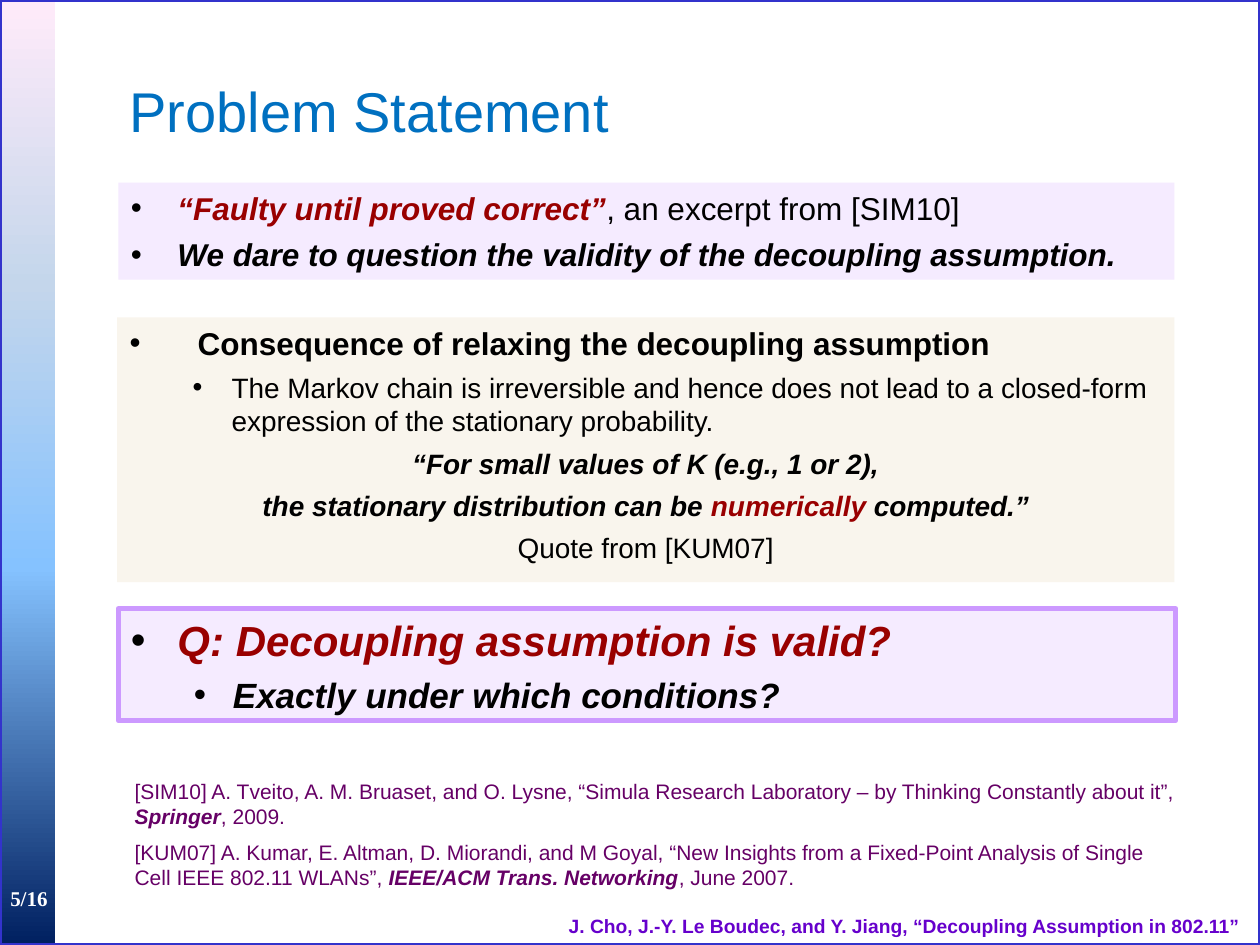
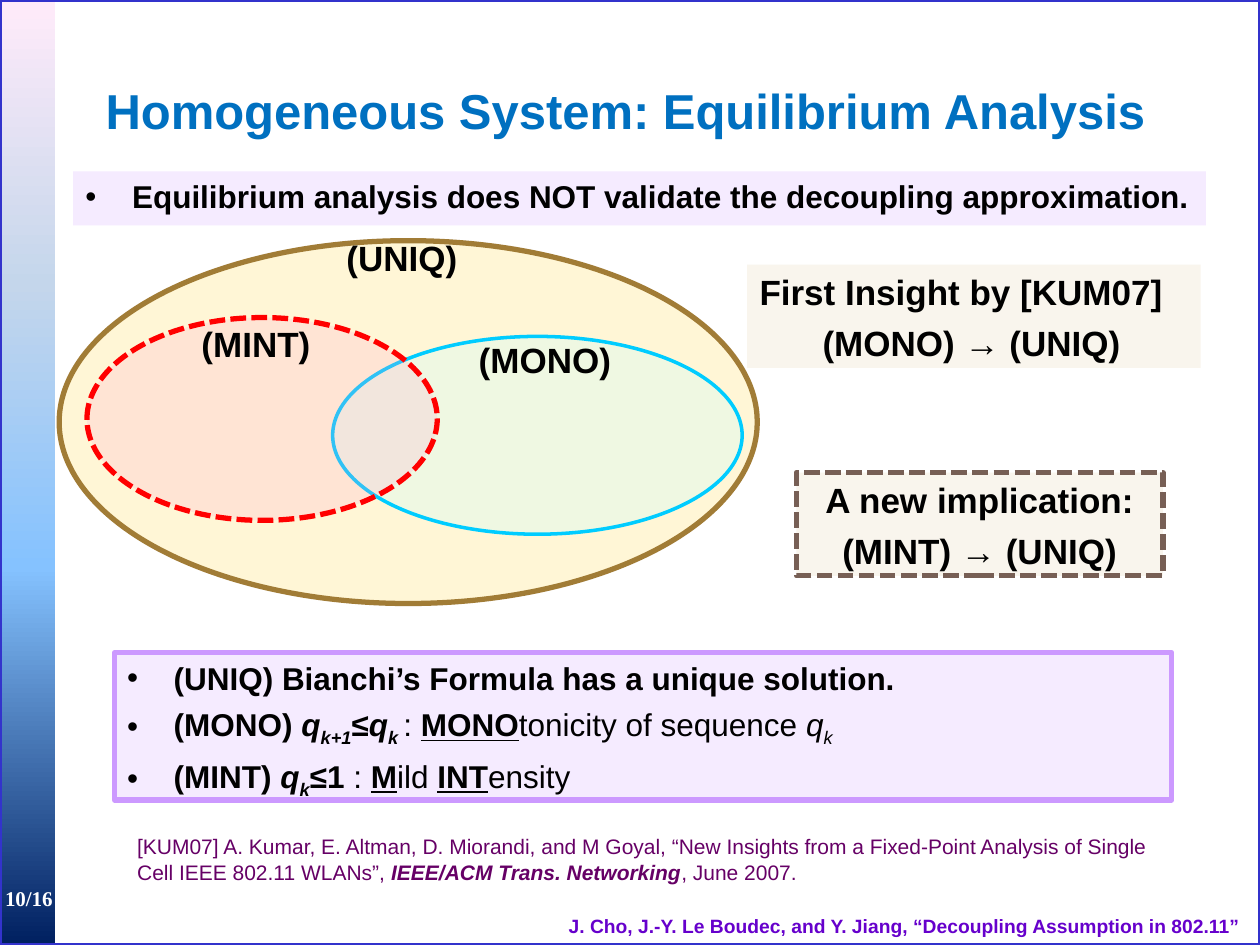
from dataclasses import dataclass
from typing import NamedTuple

from lxml.etree import SubElement
from pptx import Presentation
from pptx.dml.color import RGBColor
from pptx.enum.dml import MSO_LINE
from pptx.enum.shapes import MSO_SHAPE
from pptx.enum.text import MSO_ANCHOR, PP_ALIGN
from pptx.oxml.ns import qn
from pptx.util import Emu, Pt

EMU_PER_PX = 9144
SLIDE_WIDTH, SLIDE_HEIGHT = 1000, 750
COLORS = {
    "black": "000000", "white": "FFFFFF", "title": "0070C0", "accent": "990000",
    "reference": "660066", "footer": "6600CC", "frame": "3333CC",
    "lilac": "F5EBFF", "lilac_edge": "CC99FF", "cream": "F9F5ED", "brown": "775F55",
    "uniq": "FFCC00", "uniq_edge": "A17C36", "mono": "CCFFFF", "mono_edge": "00CCFF",
    "mint": "FF99CC", "mint_edge": "FF0000",
    "navy": "002060", "sky": "85C2FF", "mist": "C4D6EB", "blush": "FFEBFA",
}
BAND_STOPS = ((0, "navy"), (40, "sky"), (70, "mist"), (100, "blush"))
FORMATS = {"b": ("bold", True), "i": ("italic", True), "u": ("underline", True)}


class Bounds(NamedTuple):
    left: int
    top: int
    width: int
    height: int


class Outline(NamedTuple):
    color: str
    width: float = 3
    dashed: bool = False


class Span(NamedTuple):
    text: str
    flags: str = ""
    color: str = ""


class Indent(NamedTuple):
    left: int = 0
    first: int = 0


@dataclass(frozen=True)
class Line:
    spans: tuple[Span, ...]
    size: int = 18
    color: str = "black"
    indent: Indent = Indent()
    bullet: bool = False
    align: PP_ALIGN = PP_ALIGN.LEFT
    space: int = 5
    font: str = "Arial"


@dataclass(frozen=True)
class Box:
    bounds: Bounds
    lines: tuple[Line, ...] = ()
    geometry: MSO_SHAPE | None = MSO_SHAPE.RECTANGLE
    fill: str = ""
    opacity: int = 100
    outline: Outline | None = None
    anchor: MSO_ANCHOR = MSO_ANCHOR.TOP
    side_margin: int = 10


OUTER, INNER, WIDE = Indent(37, -37), Indent(81, -31), Indent(54, -54)
LILAC_EDGE = Outline("lilac_edge")


def px(value: int) -> Emu:
    """Convert layout pixels to EMU."""
    return Emu(value * EMU_PER_PX)


def rgb(name: str) -> RGBColor:
    """Look up a named colour."""
    return RGBColor.from_string(COLORS[name])


def bullet(*spans: Span, size: int = 18, indent: Indent = OUTER) -> Line:
    """Describe a bulleted line."""
    return Line(spans, size, indent=indent, bullet=True)


def centered(*spans: Span, size: int = 16) -> Line:
    """Describe a centred line without bullet."""
    return Line(spans, size, indent=WIDE, align=PP_ALIGN.CENTER)


def reference(text: str, journal: str, date: str) -> Line:
    """Describe a bibliography entry."""
    return Line((Span(text), Span(journal, "bi"), Span(date)), 12, "reference", space=6)


def text_box(bounds: Bounds, *lines: Line) -> Box:
    """Describe a plain text box."""
    return Box(bounds, lines, None)


def title(left: int, text: str, size: int, flags: str = "") -> Box:
    """Describe a slide title."""
    line = Line((Span(text, flags),), size, "title")
    return Box(Bounds(left, 55, 850, 65), (line,), None, anchor=MSO_ANCHOR.MIDDLE)


def set_label(left: int, top: int, text: str) -> Box:
    """Describe the name of a set in the diagram."""
    return Box(Bounds(left, top, 135, 42), (Line((Span(text, "b"),), 20),),
               MSO_SHAPE.ROUNDED_RECTANGLE)


def write_line(paragraph, line: Line, first: bool) -> None:
    """Fill a paragraph from its description."""
    properties = paragraph._p.get_or_add_pPr()
    properties.set("marL", str(px(line.indent.left)))
    properties.set("indent", str(px(line.indent.first)))
    settings = {"alignment": line.align, "space_before": Pt(0 if first else line.space)}
    for name, value in settings.items():
        setattr(paragraph, name, value)
    if line.bullet:
        color = SubElement(properties, qn("a:buClr"))
        SubElement(color, qn("a:srgbClr"), val=COLORS["black"])
        SubElement(properties, qn("a:buFont"), typeface="Arial")
        SubElement(properties, qn("a:buChar"), char="•")
    for span in line.spans:
        run = paragraph.add_run()
        run.text = span.text
        values = {"name": line.font, "size": Pt(line.size), "bold": False, "italic": False}
        values.update(FORMATS[flag] for flag in span.flags if flag in FORMATS)
        for name, value in values.items():
            setattr(run.font, name, value)
        run.font.color.rgb = rgb(span.color or line.color)
        if "s" in span.flags:
            run._r.get_or_add_rPr().set("baseline", "-25000")


def paint(shape, box: Box) -> None:
    """Apply fill, outline and shadow settings."""
    shape.shadow.inherit = False
    if box.fill:
        shape.fill.solid()
        shape.fill.fore_color.rgb = rgb(box.fill)
        if box.opacity < 100:
            color = shape._element.spPr.find(f"{qn('a:solidFill')}/{qn('a:srgbClr')}")
            SubElement(color, qn("a:alpha"), val=str(box.opacity * 1000))
    else:
        shape.fill.background()
    if box.outline:
        shape.line.color.rgb = rgb(box.outline.color)
        shape.line.width = Pt(box.outline.width)
        if box.outline.dashed:
            shape.line.dash_style = MSO_LINE.SQUARE_DOT
    else:
        shape.line.fill.background()


def draw_box(slide, box: Box):
    """Draw one described box and return its shape."""
    place = [px(value) for value in box.bounds]
    if box.geometry is None:
        shape = slide.shapes.add_textbox(*place)
    else:
        shape = slide.shapes.add_shape(box.geometry, *place)
        paint(shape, box)
    frame = shape.text_frame
    settings = {
        "word_wrap": True, "vertical_anchor": box.anchor,
        "margin_left": px(box.side_margin), "margin_right": px(box.side_margin),
        "margin_top": px(5), "margin_bottom": px(5),
    }
    for name, value in settings.items():
        setattr(frame, name, value)
    for index, line in enumerate(box.lines):
        paragraph = frame.add_paragraph() if index else frame.paragraphs[0]
        write_line(paragraph, line, index == 0)
    return shape


def draw_band(slide) -> None:
    """Draw the gradient band at the left edge."""
    band = draw_box(slide, Box(Bounds(0, 0, 44, SLIDE_HEIGHT), fill="sky"))
    band.fill.gradient()
    band.fill.gradient_angle = 90
    gradient = band._element.spPr.find(qn("a:gradFill"))
    stops = gradient.find(qn("a:gsLst"))
    for stop in list(stops):
        stops.remove(stop)
    for position, name in BAND_STOPS:
        stop = SubElement(stops, qn("a:gs"), pos=str(position * 1000))
        SubElement(stop, qn("a:srgbClr"), val=COLORS[name])


def add_slide(presentation, page: str, boxes: tuple[Box, ...]) -> None:
    """Add a slide with the shared frame and its own boxes."""
    slide = presentation.slides.add_slide(presentation.slide_layouts[6])
    draw_band(slide)
    number = Line((Span(page, "b"),), 12, "white", align=PP_ALIGN.CENTER,
                  font="Times New Roman")
    footer = Line((Span("J. Cho, J.-Y. Le Boudec, and Y. Jiang, "
                        "“Decoupling Assumption in 802.11”", "b"),),
                  11, "footer", align=PP_ALIGN.CENTER)
    shared = (
        Box(Bounds(0, 0, SLIDE_WIDTH, SLIDE_HEIGHT), outline=Outline("frame", 2.25)),
        Box(Bounds(0, 698, 46, 25), (number,), None, side_margin=0),
        text_box(Bounds(436, 721, 564, 29), footer),
    )
    for box in shared + boxes:
        draw_box(slide, box)


SIM10 = reference(
    "[SIM10] A. Tveito, A. M. Bruaset, and O. Lysne, “Simula Research Laboratory "
    "– by Thinking Constantly about it”, ", "Springer", ", 2009.")
KUM07 = reference(
    "[KUM07] A. Kumar, E. Altman, D. Miorandi, and M Goyal, “New Insights from a "
    "Fixed-Point Analysis of Single Cell IEEE 802.11 WLANs”, ",
    "IEEE/ACM Trans. Networking", ", June 2007.")

PROBLEM_STATEMENT = (
    title(93, "Problem Statement", 32),
    Box(Bounds(93, 252, 839, 210), (
        bullet(Span("Consequence of relaxing the decoupling assumption", "b"), indent=WIDE),
        bullet(Span("The Markov chain is irreversible and hence does not lead to a "
                    "closed-form expression of the stationary probability."),
               size=16, indent=INNER),
        centered(Span("“For small values of K (e.g., 1 or 2),", "bi")),
        centered(Span("the stationary distribution can be ", "bi"),
                 Span("numerically", "bi", "accent"), Span(" computed.”", "bi")),
        centered(Span("Quote from [KUM07]")),
    ), fill="cream"),
    text_box(Bounds(97, 613, 848, 100), SIM10, KUM07),
    Box(Bounds(94, 145, 838, 77), (
        bullet(Span("“Faulty until proved correct”", "bi", "accent"),
               Span(", an excerpt from [SIM10]")),
        bullet(Span("We dare to question the validity of the decoupling assumption.", "bi")),
    ), fill="lilac"),
    Box(Bounds(94, 483, 839, 89), (
        bullet(Span("Q: Decoupling assumption is valid?", "bi", "accent"), size=24),
        bullet(Span("Exactly under which conditions?", "bi"), size=20, indent=INNER),
    ), fill="lilac", outline=LILAC_EDGE),
)

EQUILIBRIUM_ANALYSIS = (
    title(74, "Homogeneous System: Equilibrium Analysis", 28, "b"),
    text_box(Bounds(99, 657, 848, 50), KUM07),
    Box(Bounds(91, 518, 839, 117), (
        bullet(Span("(UNIQ) Bianchi’s Formula has a unique solution.", "b")),
        bullet(Span("(MONO) ", "b"), Span("q", "bi"), Span("k+1", "bis"), Span("≤", "b"),
               Span("q", "bi"), Span("k ", "bis"), Span(": "), Span("MONO", "bu"),
               Span("tonicity of sequence "), Span("q", "i"), Span("k", "is")),
        bullet(Span("(MINT) ", "b"), Span("q", "bi"), Span("k", "bis"), Span("≤1 ", "b"),
               Span(": "), Span("M", "bu"), Span("ild "), Span("INT", "bu"),
               Span("ensity")),
    ), fill="lilac", outline=LILAC_EDGE),
    Box(Bounds(58, 136, 899, 43), (
        bullet(Span("Equilibrium analysis does NOT validate the decoupling approximation.",
                    "b")),
    ), fill="lilac"),
    Box(Bounds(47, 191, 554, 288), geometry=MSO_SHAPE.OVAL, fill="uniq", opacity=16,
        outline=Outline("uniq_edge")),
    set_label(263, 181, "(UNIQ)"),
    Box(Bounds(264, 267, 325, 157), geometry=MSO_SHAPE.OVAL, fill="mono", opacity=30,
        outline=Outline("mono_edge", 2)),
    set_label(368, 262, "(MONO)"),
    Box(Bounds(69, 252, 278, 161), geometry=MSO_SHAPE.OVAL, fill="mint", opacity=19,
        outline=Outline("mint_edge", dashed=True)),
    set_label(148, 249, "(MINT)"),
    Box(Bounds(593, 210, 360, 82), (
        Line((Span("First Insight by [KUM07]", "b"),), 20, indent=WIDE),
        Line((Span("(MONO) → (UNIQ)", "b"),), 20, indent=Indent(104, -54)),
    ), fill="cream"),
    Box(Bounds(632, 375, 291, 82), (
        centered(Span("A new implication:", "b"), size=20),
        centered(Span("(MINT) → (UNIQ)", "b"), size=20),
    ), fill="cream", outline=Outline("brown", dashed=True)),
)


def main() -> None:
    """Build and save the presentation."""
    presentation = Presentation()
    presentation.slide_width = px(SLIDE_WIDTH)
    presentation.slide_height = px(SLIDE_HEIGHT)
    add_slide(presentation, "5/16", PROBLEM_STATEMENT)
    add_slide(presentation, "10/16", EQUILIBRIUM_ANALYSIS)
    presentation.save("out.pptx")


if __name__ == "__main__":
    main()
